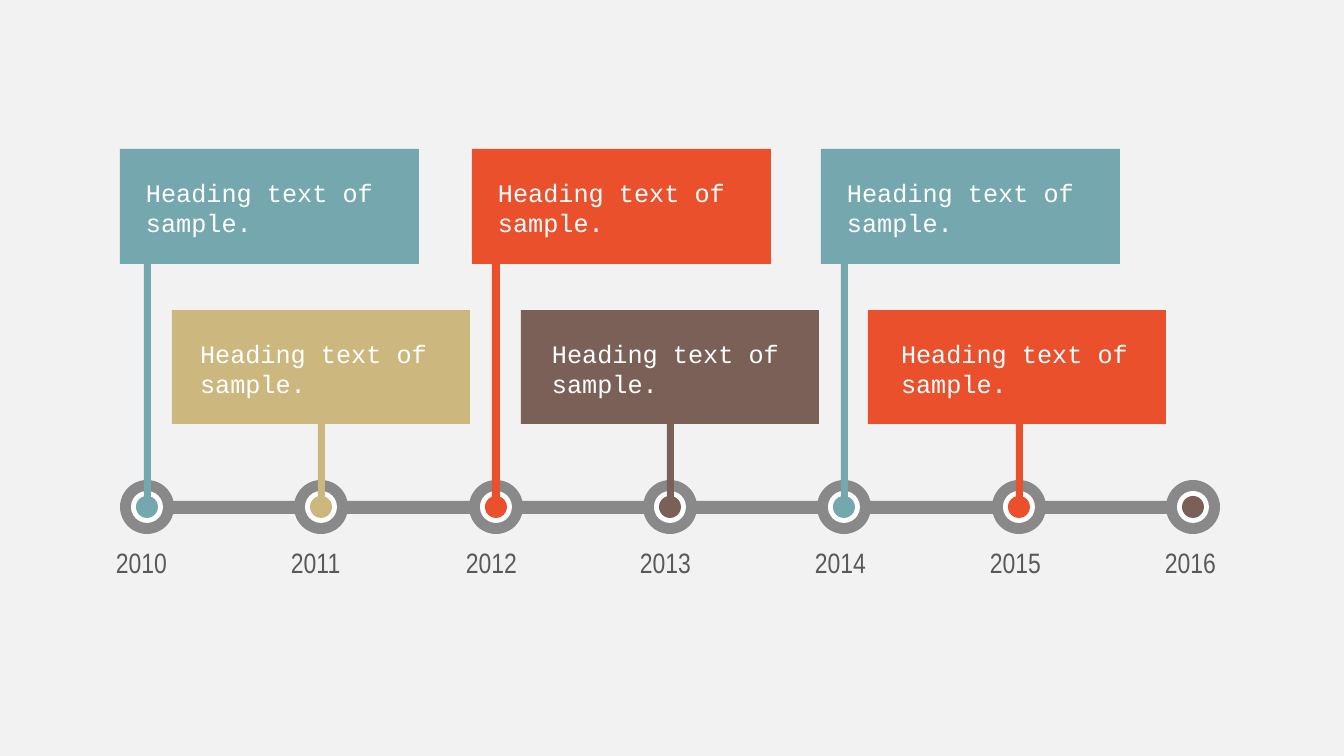
from collections import namedtuple
from dataclasses import dataclass

from pptx import Presentation
from pptx.dml.color import RGBColor
from pptx.enum.shapes import MSO_SHAPE
from pptx.enum.text import MSO_ANCHOR, PP_ALIGN
from pptx.util import Pt

EMU_PER_PX = 12192000 / 1344


def px(length):
    return round(length * EMU_PER_PX)


@dataclass(frozen=True)
class Theme:
    background: str = "F2F2F2"
    track: str = "898989"
    white: str = "FFFFFF"
    year: str = "595959"
    teal: str = "74A7AE"
    sand: str = "CCB77F"
    orange: str = "EA502C"
    brown: str = "7B6057"
    heading_font: str = "Courier New"
    heading_size: int = 18
    year_font: str = "Arial Narrow"
    year_size: int = 20


Card = namedtuple("Card", "left top width height text_inset stem_width")

AXIS_Y = 507
TRACK_HEIGHT = 13
FIRST_CENTER, LAST_CENTER = 147, 1193
FIRST_LABEL, LAST_LABEL = 106, 1155
RING, GAP, DOT = 54, 32, 22
HEADING = "Heading text of sample."


class TimelineSlide:
    def __init__(self, slide, theme):
        self.slide = slide
        self.theme = theme
        fill = slide.background.fill
        fill.solid()
        fill.fore_color.rgb = RGBColor.from_string(theme.background)

    def block(self, kind, left, top, width, height, color):
        """Add a flat preset shape without outline or shadow."""
        shape = self.slide.shapes.add_shape(
            kind, px(left), px(top), px(width), px(height))
        shape.shadow.inherit = False
        shape.fill.solid()
        shape.fill.fore_color.rgb = RGBColor.from_string(color)
        shape.line.fill.background()
        return shape

    def add_text(self, shape, text, font, size, color):
        paragraph = shape.text_frame.paragraphs[0]
        paragraph.alignment = PP_ALIGN.LEFT
        run = paragraph.add_run()
        run.text = text
        run.font.name = font
        run.font.size = Pt(size)
        run.font.color.rgb = RGBColor.from_string(color)

    def track(self):
        self.block(MSO_SHAPE.RECTANGLE, FIRST_CENTER, AXIS_Y - TRACK_HEIGHT // 2,
                   LAST_CENTER - FIRST_CENTER, TRACK_HEIGHT, self.theme.track)

    def marker(self, center, color):
        circles = ((RING, self.theme.track), (GAP, self.theme.white), (DOT, color))
        for diameter, fill in circles:
            self.block(MSO_SHAPE.OVAL, center - diameter // 2,
                       AXIS_Y - diameter // 2, diameter, diameter, fill)

    def stem(self, center, card, color):
        """Join the middle of a card to its marker on the axis."""
        top = card.top + card.height // 2
        self.block(MSO_SHAPE.RECTANGLE, center - card.stem_width // 2, top,
                   card.stem_width, AXIS_Y - top, color)

    def card(self, card, color):
        shape = self.block(MSO_SHAPE.RECTANGLE, card.left, card.top,
                           card.width, card.height, color)
        frame = shape.text_frame
        frame.word_wrap = True
        frame.vertical_anchor = MSO_ANCHOR.TOP
        frame.margin_left = px(card.text_inset)
        frame.margin_right = px(24)
        frame.margin_top = px(28)
        frame.margin_bottom = 0
        self.add_text(shape, HEADING, self.theme.heading_font,
                      self.theme.heading_size, self.theme.white)

    def year(self, left, text):
        box = self.slide.shapes.add_textbox(px(left), px(541), px(75), px(44))
        box.text_frame.word_wrap = True
        self.add_text(box, text, self.theme.year_font,
                      self.theme.year_size, self.theme.year)


def upper_card(left, text_inset=26, stem_width=7):
    return Card(left, 149, 299, 115, text_inset, stem_width)


def lower_card(left, text_inset):
    return Card(left, 310, 298, 114, text_inset, 7)


def spread(first, last, count):
    """Return evenly spaced whole positions from first to last."""
    return [round(first + (last - first) * i / (count - 1)) for i in range(count)]


def main():
    presentation = Presentation()
    presentation.slide_width = px(1344)
    presentation.slide_height = px(756)
    theme = Theme()
    blank = presentation.slide_layouts[6]
    timeline = TimelineSlide(presentation.slides.add_slide(blank), theme)

    milestones = [
        ("2010", theme.teal, upper_card(120)),
        ("2011", theme.sand, lower_card(172, 28)),
        ("2012", theme.orange, upper_card(472, stem_width=8)),
        ("2013", theme.brown, lower_card(521, 31)),
        ("2014", theme.teal, upper_card(821)),
        ("2015", theme.orange, lower_card(868, 33)),
        ("2016", theme.brown, None),
    ]
    centers = spread(FIRST_CENTER, LAST_CENTER, len(milestones))
    labels = spread(FIRST_LABEL, LAST_LABEL, len(milestones))

    timeline.track()
    for (year, color, card), center, label in zip(milestones, centers, labels):
        timeline.marker(center, color)
        if card:
            timeline.stem(center, card, color)
            timeline.card(card, color)
        timeline.year(label, year)

    presentation.save("out.pptx")


if __name__ == "__main__":
    main()
